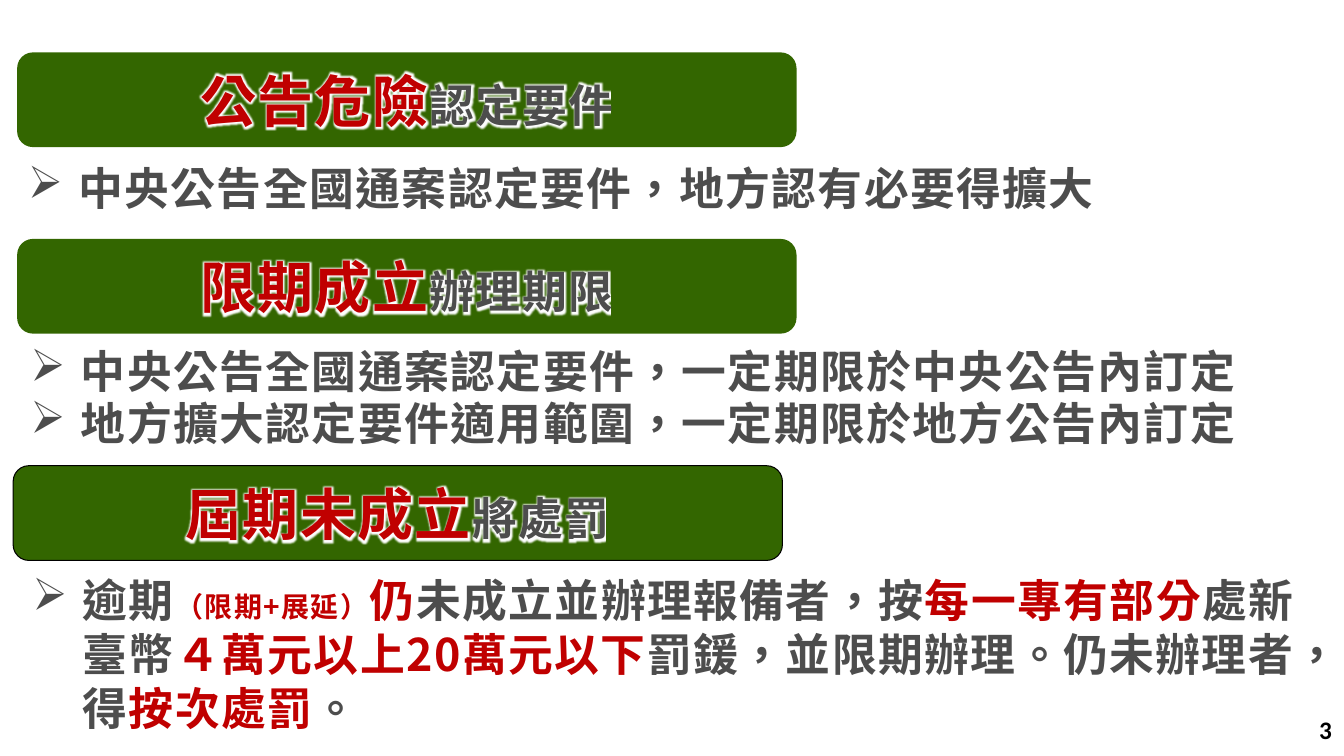
import pptx
import pptx.util
import pptx.dml.color
import pptx.enum.shapes
import pptx.enum.text
import pptx.oxml
import pptx.oxml.ns
from lxml import etree

Pt = pptx.util.Pt
WIDTH, HEIGHT = pptx.util.Inches(13.33), pptx.util.Inches(7.5)
ALIGN = pptx.enum.text.PP_ALIGN
ANCHOR = pptx.enum.text.MSO_ANCHOR
ROUNDED = pptx.enum.shapes.MSO_SHAPE.ROUNDED_RECTANGLE

THEME = {
    "font": "Noto Sans CJK SC",
    "number_font": "Calibri",
    "green": "336600",
    "red": "C00000",
    "grey": "4D4D4D",
    "black": "000000",
    "glow": "FFFFFF",
    "bullet": "➢",
    "indent": pptx.util.Inches(0.5),
    "styles": {
        "title": (40, "red"),
        "subtitle": (32, "grey"),
        "plain": (32, "grey"),
        "key": (32, "red"),
        "small": (20, "red"),
        "number": (18, "black"),
    },
}

# Boxes are left, top, width and height in percent of the slide.
SECTIONS = [
    {
        "banner": (1.28, 6.93, 57.99, 12.53),
        "heading": [("公告危險", "title"), ("認定要件", "subtitle")],
        "body": (0.98, 15.87, 97.9, 13.2),
        "anchor": ANCHOR.BOTTOM,
        "points": [[("中央公告全國通案認定要件，地方認有必要得擴大", "plain")]],
    },
    {
        "banner": (1.28, 31.6, 57.99, 12.53),
        "heading": [("限期成立", "title"), ("辦理期限", "subtitle")],
        "body": (0.98, 40.4, 99.02, 20),
        "anchor": ANCHOR.BOTTOM,
        "leading": 37,
        "points": [
            [("中央公告全國通案認定要件，一定期限於中央公告內訂定", "plain")],
            [("地方擴大認定要件適用範圍，一定期限於地方公告內訂定", "plain")],
        ],
    },
    {
        "banner": (0.98, 61.6, 57.24, 12.53),
        "outlined": True,
        "heading": [("屆期未成立", "title"), ("將處罰", "subtitle")],
        "body": (0.98, 73.2, 97, 25.07),
        "anchor": ANCHOR.MIDDLE,
        "leading": 38.5,
        "points": [[
            ("逾期", "plain"), ("（限期+展延）", "small"), ("仍", "key"),
            ("未成立並辦理報備者，按", "plain"), ("每一專有部分", "key"),
            ("處新臺幣", "plain"), ("４萬元以上20萬元以下", "key"),
            ("罰鍰，並限期辦理。仍未辦理者，得", "plain"),
            ("按次處罰", "key"), ("。", "plain"),
        ]],
    },
]


def color(name):
    return pptx.dml.color.RGBColor.from_string(THEME[name])


def place(box):
    """Turn percentages of the slide into lengths."""
    return [round(share * side / 100)
            for share, side in zip(box, (WIDTH, HEIGHT) * 2)]


def apply(target, formats):
    for name, value in formats.items():
        setattr(target, name, value)


def add_runs(paragraph, parts, font=THEME["font"], spacing=100, glow=False):
    """Add styled runs; spacing is in hundredths of a point."""
    for text, style in parts:
        size, tint = THEME["styles"][style]
        run = paragraph.add_run()
        run.text = text
        apply(run.font, {"size": Pt(size), "bold": True, "name": font})
        run.font.color.rgb = color(tint)
        properties = run.font._element
        properties.set("lang", "zh-TW")
        properties.set("spc", str(spacing))
        latin = properties.find(pptx.oxml.ns.qn("a:latin"))
        east_asian = etree.Element(pptx.oxml.ns.qn("a:ea"), typeface=font)
        latin.addnext(east_asian)
        if glow:
            latin.addprevious(pptx.oxml.parse_xml(
                f'<a:effectLst {pptx.oxml.ns.nsdecls("a")}><a:glow rad="63500">'
                f'<a:srgbClr val="{THEME["glow"]}"/></a:glow></a:effectLst>'))


def add_bullet(paragraph):
    properties = paragraph._p.get_or_add_pPr()
    properties.set("marL", str(THEME["indent"]))
    properties.set("indent", str(-THEME["indent"]))
    bullet = etree.SubElement(properties, pptx.oxml.ns.qn("a:buChar"))
    bullet.set("char", THEME["bullet"])


def add_panel(group, box, anchor):
    panel = group.shapes.add_shape(ROUNDED, *place(box))
    panel.shadow.inherit = False
    panel.fill.background()
    panel.line.fill.background()
    apply(panel.text_frame, {"word_wrap": True, "vertical_anchor": anchor})
    return panel


def add_banner(group, section):
    banner = add_panel(group, section["banner"], ANCHOR.MIDDLE)
    banner.fill.solid()
    banner.fill.fore_color.rgb = color("green")
    if section.get("outlined"):
        banner.line.color.rgb = color("black")
        banner.line.width = Pt(0.75)
    heading = banner.text_frame.paragraphs[0]
    heading.alignment = ALIGN.CENTER
    add_runs(heading, section["heading"], glow=True)


def add_points(group, section):
    frame = add_panel(group, section["body"], section["anchor"]).text_frame
    apply(frame, {"margin_top": pptx.util.Inches(0.1), "margin_bottom": 0})
    for index, parts in enumerate(section["points"]):
        point = frame.add_paragraph() if index else frame.paragraphs[0]
        apply(point, {"alignment": ALIGN.LEFT,
                      "line_spacing": Pt(section.get("leading", 37))})
        add_bullet(point)
        add_runs(point, parts)


def add_page_number(slide, number):
    frame = slide.shapes.add_textbox(*place((77.34, 93.87, 22.5, 5.33))).text_frame
    apply(frame, {"word_wrap": True, "vertical_anchor": ANCHOR.MIDDLE})
    paragraph = frame.paragraphs[0]
    paragraph.alignment = ALIGN.RIGHT
    add_runs(paragraph, [(number, "number")], THEME["number_font"], spacing=0)


def main():
    deck = pptx.Presentation()
    apply(deck, {"slide_width": WIDTH, "slide_height": HEIGHT})
    slide = deck.slides.add_slide(deck.slide_layouts[6])
    add_page_number(slide, "3")
    for section in SECTIONS:
        group = slide.shapes.add_group_shape()
        add_banner(group, section)
        add_points(group, section)
    deck.save("out.pptx")


if __name__ == "__main__":
    main()
